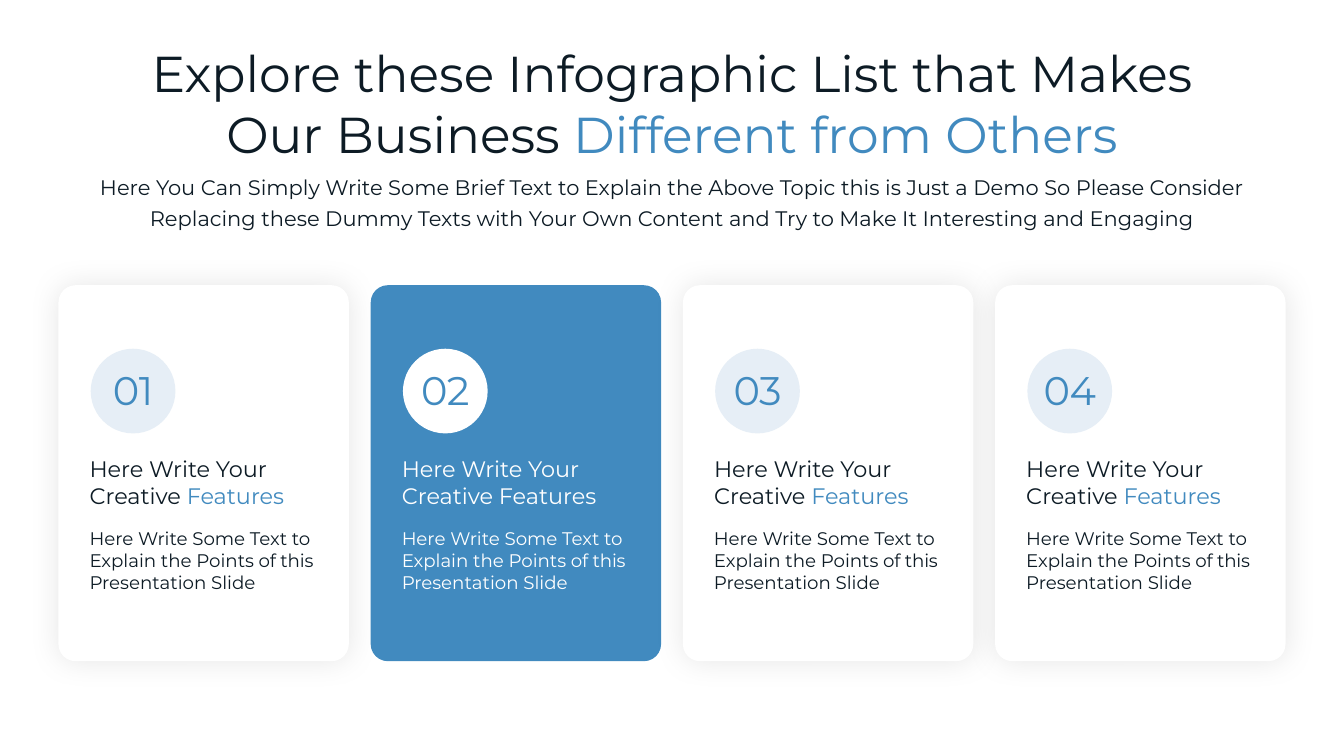
import pptx
import pptx.util
import pptx.dml.color
import pptx.enum.shapes
import pptx.enum.text
import pptx.oxml
import pptx.oxml.ns

Inches = pptx.util.Inches
Pt = pptx.util.Pt
RGBColor = pptx.dml.color.RGBColor
SHAPES = pptx.enum.shapes.MSO_SHAPE
ALIGN = pptx.enum.text.PP_ALIGN

COLORS = {"ink": "0D1B25", "blue": "418ABF", "pale": "E6EEF6", "white": "FFFFFF"}
SHADOW = (
    f'<a:effectLst {pptx.oxml.ns.nsdecls("a")}>'
    f'<a:outerShdw blurRad="{Pt(22)}" dist="0" algn="ctr" rotWithShape="0">'
    '<a:srgbClr val="000000"><a:alpha val="10000"/></a:srgbClr>'
    "</a:outerShdw></a:effectLst>"
)

deck = pptx.Presentation()
deck.slide_width = Inches(13.33)
deck.slide_height = Inches(7.5)
page = deck.slides.add_slide(deck.slide_layouts[6])


def add_text(left, top, width, height, size, lines, align=ALIGN.LEFT, leading=None):
    box = page.shapes.add_textbox(Inches(left), Inches(top), Inches(width), Inches(height))
    frame = box.text_frame
    frame.word_wrap = False
    frame.auto_size = pptx.enum.text.MSO_AUTO_SIZE.SHAPE_TO_FIT_TEXT
    for index, line in enumerate(lines):
        para = frame.add_paragraph() if index else frame.paragraphs[0]
        para.alignment = align
        if leading:
            para.line_spacing = Pt(leading)
        for words, color, spacing in line:
            span = para.add_run()
            span.text = words
            span.font.name = "Montserrat"
            span.font.size = Pt(size)
            span.font.color.rgb = RGBColor.from_string(COLORS[color])
            if spacing:
                span.font._element.set("spc", str(spacing))


def add_panel(kind, left, top, width, height, color):
    panel = page.shapes.add_shape(kind, Inches(left), Inches(top), Inches(width), Inches(height))
    panel.fill.solid()
    panel.fill.fore_color.rgb = RGBColor.from_string(COLORS[color])
    panel.line.fill.background()
    panel.shadow.inherit = False
    return panel


add_text(0.94, 0.37, 11.45, 1.31, 36, [
    [("Explore these Infographic List that Makes", "ink", 0)],
    [("Our Business ", "ink", 0), ("Different from Others", "blue", 0)],
], ALIGN.CENTER)
add_text(0.68, 1.63, 11.97, 0.69, 15, [
    [("Here You Can Simply Write Some Brief Text to Explain the Above Topic this is Just a Demo So Please Consider", "ink", 0)],
    [("Replacing these Dummy Texts with Your Own Content and Try to Make It Interesting and Engaging", "ink", 0)],
], ALIGN.CENTER, 22)

first_left, card_width, last_left = 0.58, 2.88, 9.87
pitch = (last_left - first_left) / 3
for index, number in enumerate(["01", "02", "03", "04"]):
    left = first_left + index * pitch
    highlighted = number == "02"
    text_color = "white" if highlighted else "ink"
    accent = "white" if highlighted else "blue"

    card = add_panel(SHAPES.ROUNDED_RECTANGLE, left, 2.83, card_width, 3.73,
                     "blue" if highlighted else "white")
    card.adjustments[0] = 0.059
    if not highlighted:
        properties = card._element.spPr
        properties.remove(properties.find(pptx.oxml.ns.qn("a:effectLst")))
        properties.append(pptx.oxml.parse_xml(SHADOW))

    add_text(left + 0.21, 4.47, 2.32, 0.65, 16, [
        [("Here Write Your", text_color, 0)],
        [("Creative ", text_color, 0), ("Features", accent, 0)],
    ])
    add_panel(SHAPES.OVAL, left + 0.32, 3.46, 0.84, 0.84, "white" if highlighted else "pale")
    add_text(left + 0.38, 3.58, 0.72, 0.58, 28.5, [[(number, "blue", -30)]], ALIGN.CENTER)
    add_text(left + 0.21, 5.18, 2.46, 0.76, 13, [
        [("Here Write Some Text to", text_color, 0)],
        [("Explain the Points ", text_color, 0), ("of this", text_color, -10)],
        [("Presentation Slide", text_color, 0)],
    ])

deck.save("out.pptx")
